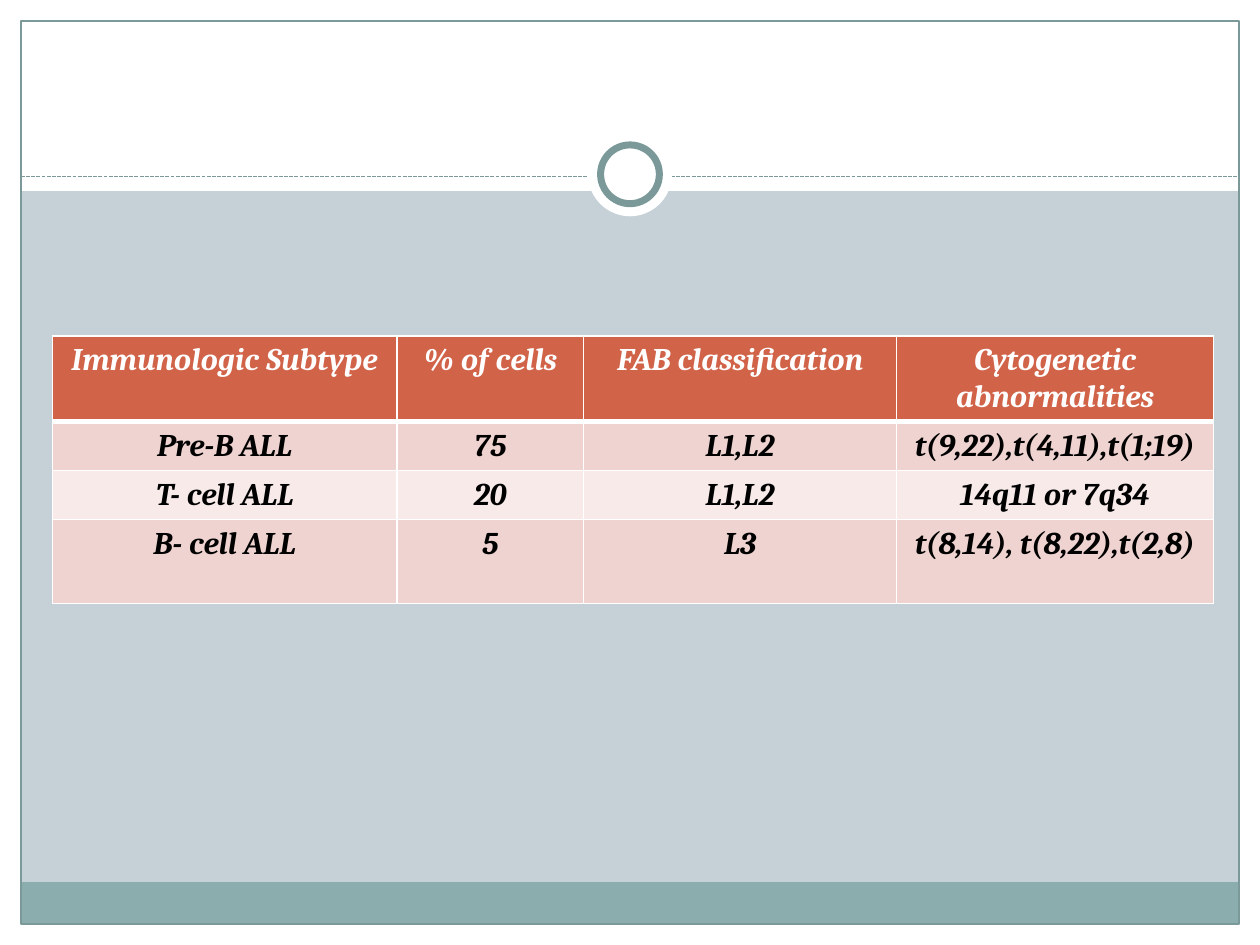
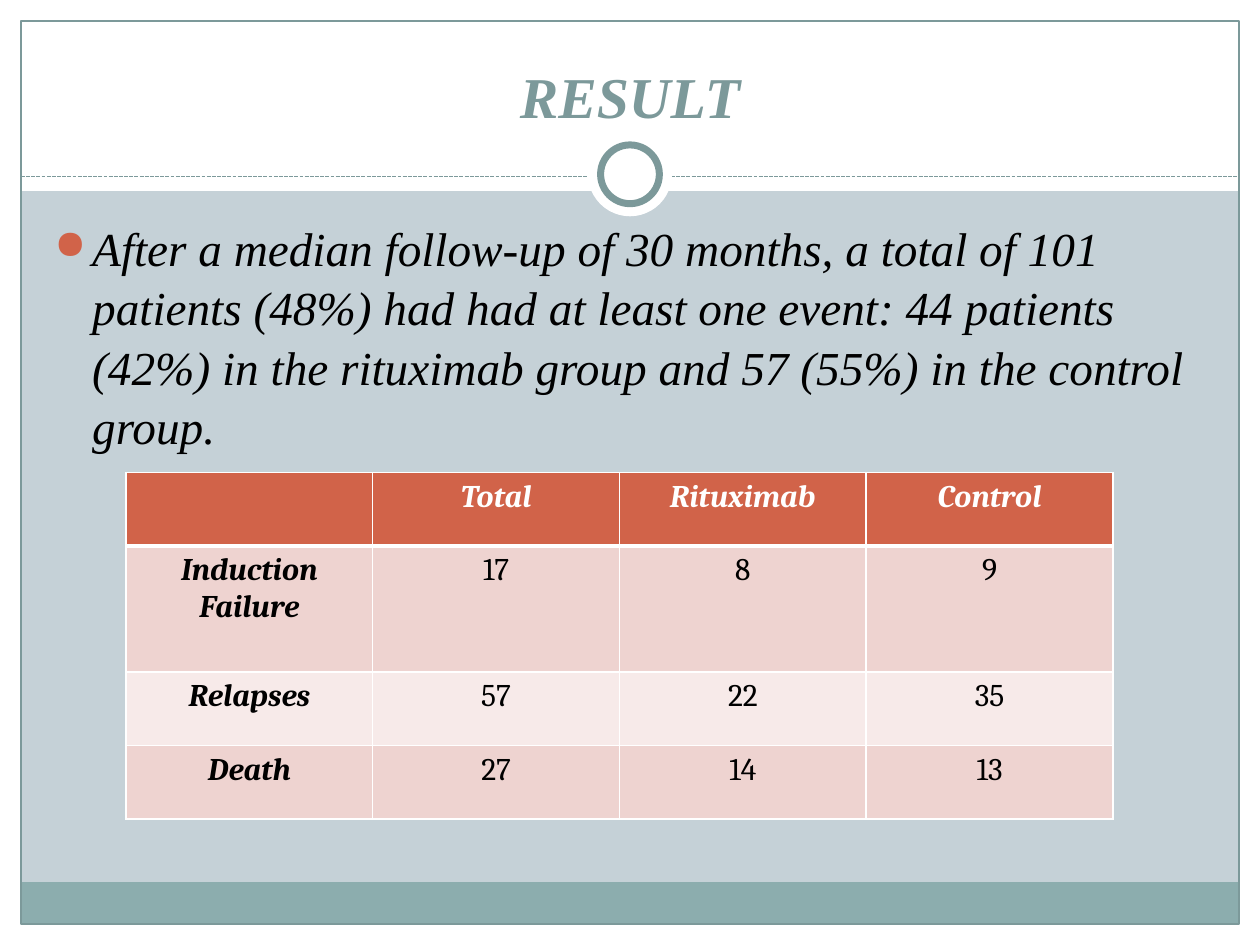
from dataclasses import dataclass
from typing import Optional

from lxml import etree
from pptx import Presentation
from pptx.dml.color import RGBColor
from pptx.enum.dml import MSO_LINE
from pptx.enum.shapes import MSO_CONNECTOR, MSO_SHAPE
from pptx.enum.text import MSO_ANCHOR, PP_ALIGN
from pptx.oxml import parse_xml
from pptx.oxml.ns import nsdecls, qn
from pptx.util import Inches, Pt

RECT, OVAL = MSO_SHAPE.RECTANGLE, MSO_SHAPE.OVAL
STRAIGHT, DASH = MSO_CONNECTOR.STRAIGHT, MSO_LINE.SQUARE_DOT
CENTER, LEFT = PP_ALIGN.CENTER, PP_ALIGN.LEFT
TOP, BOTTOM = MSO_ANCHOR.TOP, MSO_ANCHOR.BOTTOM

# Square grid of 60 columns by 45 rows
COLS, ROWS = 60, 45
UNIT = Inches(10) / COLS

WHITE, BLACK = "FFFFFF", "000000"
BACKGROUND, BAND, SLATE = "C5D1D7", "8CADAE", "7C999A"
RUST, PINK, PALE = "D16349", "EED3D0", "F7EAE9"
TEXT_FONT, TABLE_FONT = "Times New Roman", "Cambria"


@dataclass(frozen=True)
class Panel:
    x: float
    y: float
    w: float
    h: float
    fill: Optional[str] = None
    line_width: float = 0
    kind: int = RECT


@dataclass(frozen=True)
class Grid:
    x: float
    y: float
    widths: list[float]
    heights: list[float]
    rows: list[list[str]]
    plain_values: bool = False


FRAME = [
    Panel(0, 44, COLS, 1, WHITE),
    Panel(0, 0, COLS, 9.1, WHITE),
    Panel(0, 0, 1, ROWS, WHITE),
    Panel(59, 0, 1, ROWS, WHITE),
    Panel(1, 42, 58, 2, BAND),
    Panel(1, 1, 58, 43, line_width=0.75),
]
RING = [
    Panel(28, 6.3, 4, 4, WHITE, kind=OVAL),
    Panel(28.6, 6.9, 2.8, 2.8, WHITE, 4, OVAL),
]
RULE_Y = 8.4

SUBTYPES = Grid(2.5, 16, [16.4, 8.9, 14.9, 15.1], [4, 2.33, 2.33, 4], [
    ["Immunologic Subtype", "% of cells", "FAB classification",
     "Cytogenetic abnormalities"],
    ["Pre-B ALL", "75", "L1,L2", "t(9,22),t(4,11),t(1;19)"],
    ["T- cell ALL", "20", "L1,L2", "14q11 or 7q34"],
    ["B- cell ALL", "5", "L3", "t(8,14), t(8,22),t(2,8)"],
])
EVENTS = Grid(6, 22.5, [47 / 4] * 4, [3.5, 6, 3.5, 3.5], [
    ["", "Total", "Rituximab", "Control"],
    ["Induction Failure", "17", "8", "9"],
    ["Relapses", "57", "22", "35"],
    ["Death", "27", "14", "13"],
], plain_values=True)
FOLLOW_UP = (
    "After a median follow-up of 30 months, a total of 101 patients (48%) "
    "had had at least one event: 44 patients (42%) in the rituximab group "
    "and 57 (55%) in the control group."
)


def rgb(value: str) -> RGBColor:
    return RGBColor.from_string(value)


def units(*values: float) -> list[int]:
    return [round(v * UNIT) for v in values]


def style(p, size: float, font: str, color: str, bold: bool = True,
          italic: bool = True, align=CENTER) -> None:
    p.alignment = align
    p.font.size, p.font.name = Pt(size), font
    p.font.bold, p.font.italic = bold, italic
    p.font.color.rgb = rgb(color)


def add_panel(s, panel: Panel) -> None:
    sp = s.shapes.add_shape(
        panel.kind, *units(panel.x, panel.y, panel.w, panel.h))
    sp.shadow.inherit = False
    if panel.fill:
        sp.fill.solid()
        sp.fill.fore_color.rgb = rgb(panel.fill)
    else:
        sp.fill.background()
    if panel.line_width:
        sp.line.color.rgb = rgb(SLATE)
        sp.line.width = Pt(panel.line_width)
    else:
        sp.line.fill.background()


def add_rule(s) -> None:
    line = s.shapes.add_connector(STRAIGHT, *units(1, RULE_Y, 59, RULE_Y))
    line.line.color.rgb = rgb(SLATE)
    line.line.width = Pt(0.75)
    line.line.dash_style = DASH
    etree.SubElement(line._element.spPr, qn("a:effectLst"))


def add_text(s, box: tuple[float, ...], text: str, anchor):
    tf = s.shapes.add_textbox(*units(*box)).text_frame
    tf.word_wrap = True
    tf.vertical_anchor = anchor
    p = tf.paragraphs[0]
    p.text = text
    return p


def add_title(s, text: str) -> None:
    p = add_text(s, (2, 1.5, 56, 5), text, BOTTOM)
    style(p, 33, TEXT_FONT, SLATE)


def add_bullet(s, text: str) -> None:
    p = add_text(s, (2, 10, 55.8, 30), text, TOP)
    style(p, 27, TEXT_FONT, BLACK, bold=False, align=LEFT)
    p.line_spacing = 1.05
    p.space_before = Pt(5.4)
    pPr = p._p.get_or_add_pPr()
    pPr.set("marL", str(Inches(0.3)))
    pPr.set("indent", str(-Inches(0.3)))
    bullet = (f'<a:buClr {nsdecls("a")}><a:srgbClr val="{RUST}"/></a:buClr>',
              f'<a:buSzPct {nsdecls("a")} val="85000"/>',
              f'<a:buChar {nsdecls("a")} char="●"/>')
    first = pPr.find(qn("a:defRPr"))
    for xml in bullet:
        first.addprevious(parse_xml(xml))


def add_borders(cell, top: float, bottom: float) -> None:
    tcPr = cell._tc.get_or_add_tcPr()
    for side, width in zip("LRTB", (1, 1, top, bottom)):
        tcPr.append(parse_xml(
            f'<a:ln{side} {nsdecls("a")} w="{Pt(width)}"><a:solidFill>'
            f'<a:srgbClr val="{WHITE}"/></a:solidFill></a:ln{side}>'))


def add_grid(s, grid: Grid) -> None:
    size = sum(grid.widths), sum(grid.heights)
    table = s.shapes.add_table(len(grid.heights), len(grid.widths),
                               *units(grid.x, grid.y, *size)).table
    for column, width in zip(table.columns, units(*grid.widths)):
        column.width = width
    for row, height in zip(table.rows, units(*grid.heights)):
        row.height = height
    for i, values in enumerate(grid.rows):
        for j, value in enumerate(values):
            cell = table.cell(i, j)
            add_borders(cell, 3 if i == 1 else 1, 3 if i == 0 else 1)
            cell.fill.solid()
            cell.fill.fore_color.rgb = rgb(
                RUST if i == 0 else PINK if i % 2 else PALE)
            cell.text = value
            strong = not (grid.plain_values and i and j)
            style(cell.text_frame.paragraphs[0], 18, TABLE_FONT,
                  BLACK if i else WHITE, strong, strong)


def add_slide(prs):
    s = prs.slides.add_slide(prs.slide_layouts[6])
    s.background.fill.solid()
    s.background.fill.fore_color.rgb = rgb(BACKGROUND)
    for panel in FRAME:
        add_panel(s, panel)
    add_rule(s)
    for panel in RING:
        add_panel(s, panel)
    return s


def main() -> None:
    prs = Presentation()
    prs.slide_width, prs.slide_height = units(COLS, ROWS)

    # Immunologic subtypes
    add_grid(add_slide(prs), SUBTYPES)

    # Trial result
    s = add_slide(prs)
    add_title(s, "RESULT")
    add_bullet(s, FOLLOW_UP)
    add_grid(s, EVENTS)

    prs.save("out.pptx")


if __name__ == "__main__":
    main()
